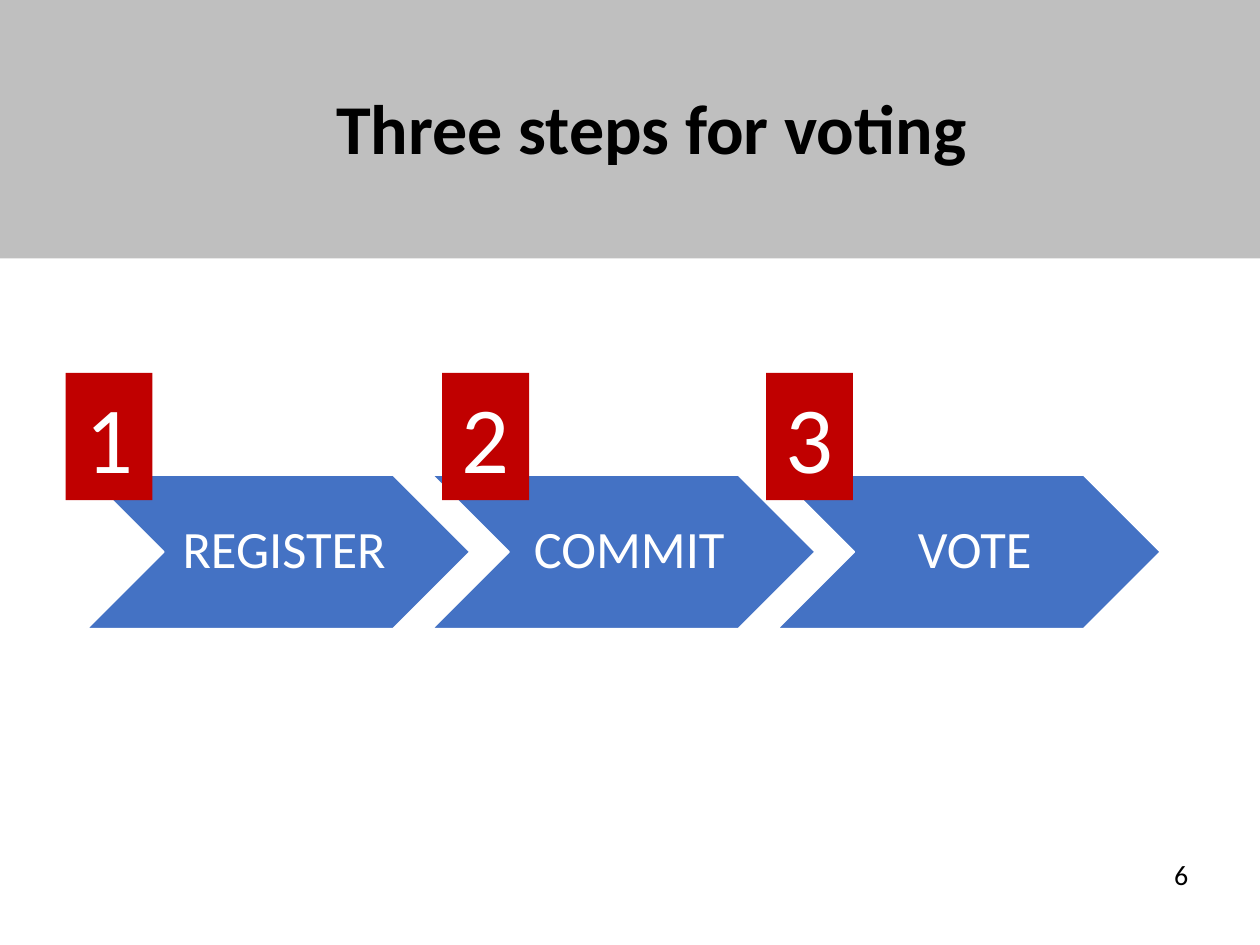
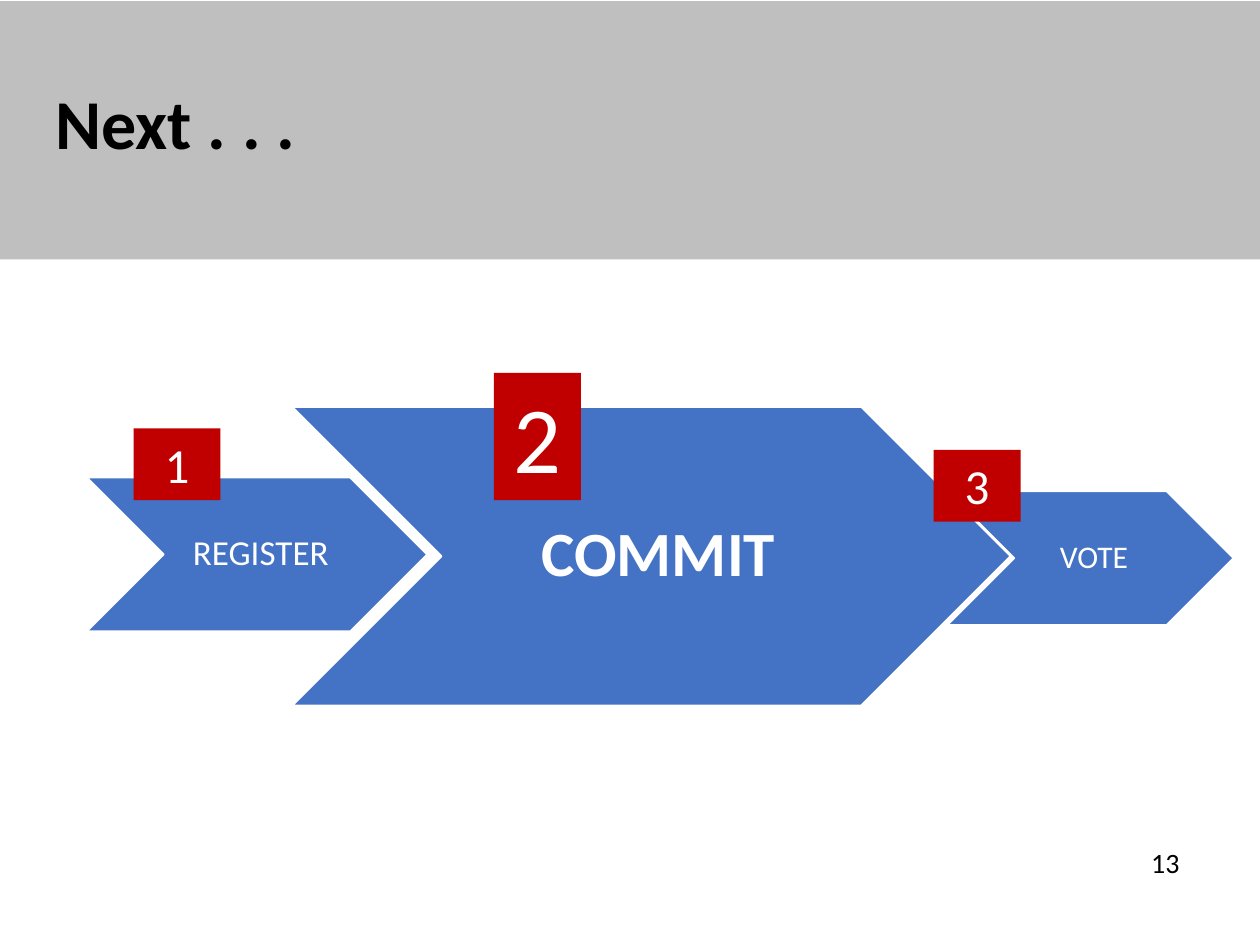
from pptx import Presentation
from pptx.dml.color import RGBColor
from pptx.enum import shapes, text
from pptx.util import Inches, Pt

FONT = "Calibri"
BLACK, WHITE = "000000", "FFFFFF"
BAND_GREY, STEP_BLUE, BADGE_RED = "BFBFBF", "4472C4", "C00000"
LEFT, CENTER, RIGHT = text.PP_ALIGN.LEFT, text.PP_ALIGN.CENTER, text.PP_ALIGN.RIGHT
TOP, MIDDLE = text.MSO_ANCHOR.TOP, text.MSO_ANCHOR.MIDDLE
STEPS = ("REGISTER", "COMMIT", "VOTE")


def color(hex_string):
    return RGBColor.from_string(hex_string)


def write(shape, words, size, ink, align, anchor=TOP, bold=False, spacing=1.0):
    frame = shape.text_frame
    frame.word_wrap = True
    frame.vertical_anchor = anchor
    paragraph = frame.paragraphs[0]
    paragraph.text = words
    paragraph.alignment = align
    paragraph.line_spacing = spacing
    paragraph.font.name = FONT
    paragraph.font.size = Pt(size)
    paragraph.font.bold = bold
    paragraph.font.color.rgb = color(ink)


def add_filled(slide, kind, box, fill, outline=None):
    shape = slide.shapes.add_shape(kind, *map(Inches, box))
    shape.shadow.inherit = False
    shape.fill.solid()
    shape.fill.fore_color.rgb = color(fill)
    if outline:
        shape.line.color.rgb = color(outline)
        shape.line.width = Pt(1)
    else:
        shape.line.fill.background()
    return shape


def add_title(slide, title, align, band_top=0, spacing=1.0):
    add_filled(slide, shapes.MSO_SHAPE.RECTANGLE, (0, band_top, 10, 2.05), BAND_GREY)
    box = slide.shapes.add_textbox(Inches(0.34), Inches(0.28), Inches(9.66), Inches(1.45))
    write(box, title, 40, BLACK, align, MIDDLE, True, spacing)


def add_step(slide, label, box, size, bold=False):
    chevron = add_filled(slide, shapes.MSO_SHAPE.CHEVRON, box, STEP_BLUE, WHITE)
    write(chevron, label, size, WHITE, CENTER, MIDDLE, bold, 0.9)
    frame = chevron.text_frame
    frame.word_wrap = False
    frame.margin_left = Pt(size * 0.32)
    frame.margin_right = frame.margin_top = frame.margin_bottom = Pt(size * 0.1)


def add_badge(slide, number, left, top, size):
    height = 1.01 if size == 54 else 0.57
    badge = add_filled(slide, shapes.MSO_SHAPE.RECTANGLE, (left, top, 0.69, height), BADGE_RED)
    write(badge, str(number), size, WHITE, CENTER)


def add_page_number(slide, number, right, top):
    width = 1.7
    box = slide.shapes.add_textbox(Inches(right - width), Inches(top), Inches(width), Inches(0.37))
    write(box, str(number), 16, BLACK, RIGHT)


def build_overview(slide):
    add_title(slide, "Three steps for voting", CENTER)
    for index, label in enumerate(STEPS):
        add_step(slide, label, (0.69 + index * 2.74, 3.77, 3.04, 1.22), 30)
    for number, left in enumerate((0.52, 3.51, 6.08), start=1):
        add_badge(slide, number, left, 2.96, 54)
    add_page_number(slide, 6, 9.53, 6.76)


def build_next_step(slide):
    add_title(slide, "Next . . .", LEFT, band_top=0.01, spacing=0.9)
    boxes = ((0.69, 3.79, 2.7, 1.22), (2.32, 3.23, 5.7, 2.37), (7.52, 3.9, 2.27, 1.06))
    for label, box, size in zip(STEPS, boxes, (20, 36, 18)):
        add_step(slide, label, box, size, bold=label == "COMMIT")
    badges = ((1.06, 3.4, 28), (3.92, 2.96, 54), (7.41, 3.57, 28))
    for number, badge in enumerate(badges, start=1):
        add_badge(slide, number, *badge)
    add_page_number(slide, 13, 9.46, 6.66)


def main():
    presentation = Presentation()
    presentation.slide_width = Inches(10)
    presentation.slide_height = Inches(7.5)
    for build in (build_overview, build_next_step):
        build(presentation.slides.add_slide(presentation.slide_layouts[6]))
    presentation.save("out.pptx")


if __name__ == "__main__":
    main()
